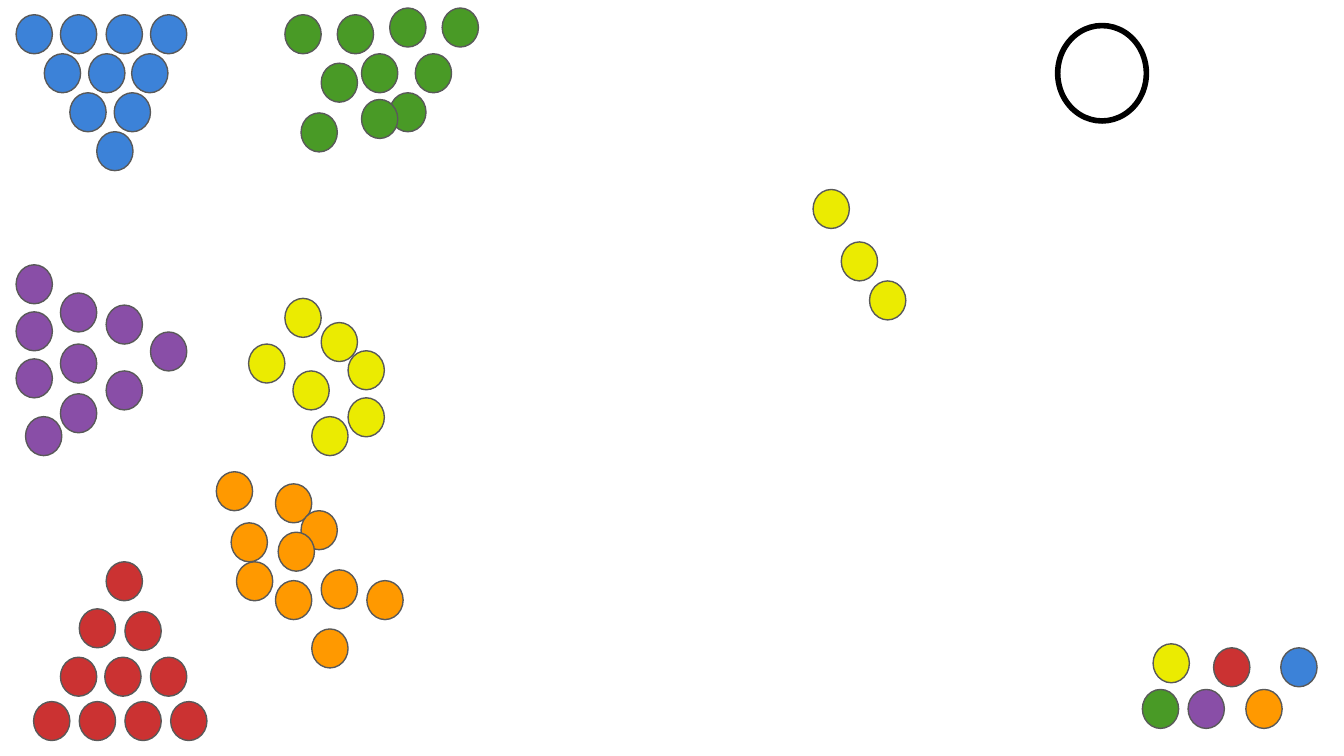
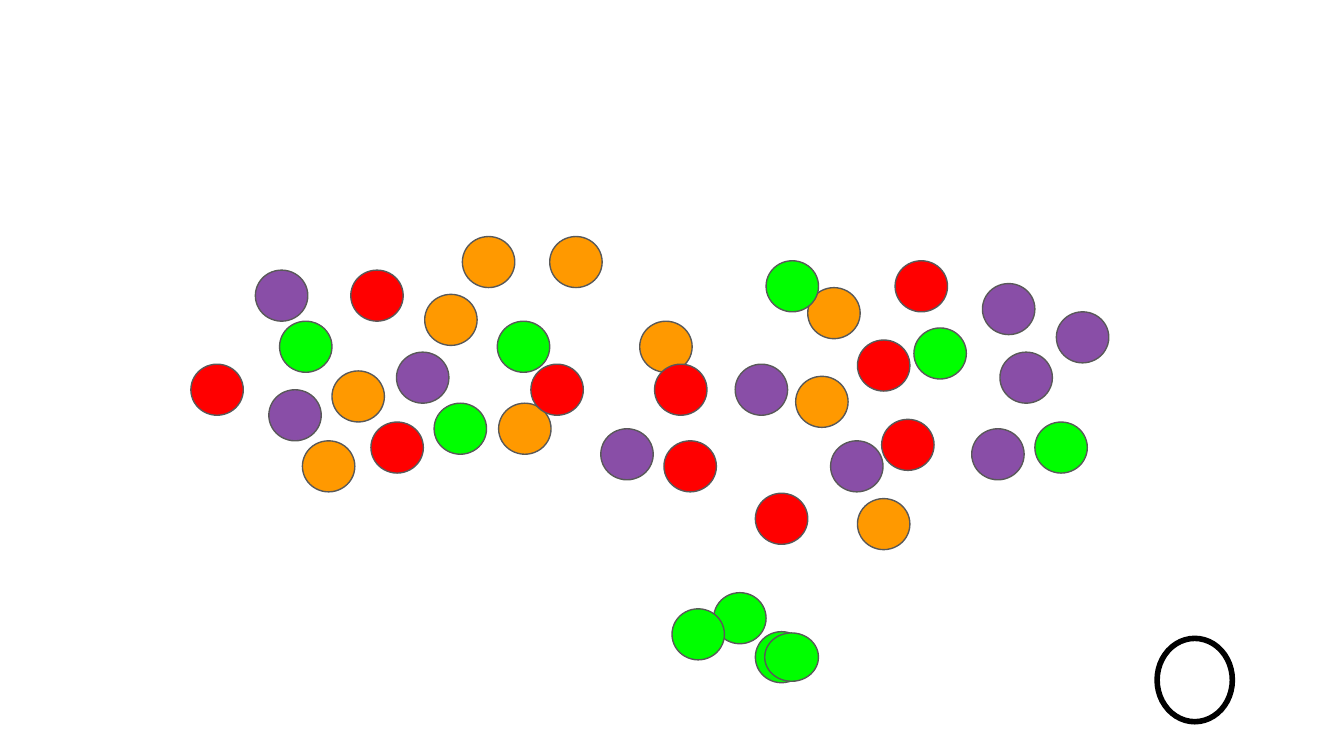
from pptx import Presentation
from pptx import util as u
from pptx.dml.color import RGBColor
from pptx.enum import shapes

PX = 9144  # EMU in one px, 100 px to the inch
SLIDE_WIDTH = 1000  # the height follows from 16:9

BLUE, RED, PURPLE = "3C82D8", "CB3232", "894EA7"
GREEN, YELLOW, ORANGE = "499A26", "EBEB01", "FF9900"
BRIGHT_RED, BRIGHT_GREEN = "FF0000", "00FF00"
WHITE, BLACK, OUTLINE = "FFFFFF", "000000", "595959"

SMALL_BALL = (27, 29)
LARGE_BALL = (39, 38)

# Ordered racks: box, colour, and lines of balls as (first, last, count)
RACKS = [
    ((12, 11), BLUE, [((0, 0), (100, 0), 4), ((21, 29), (86, 29), 3),
                      ((40, 58), (73, 58), 2), ((60, 87), (60, 87), 1)]),
    ((25, 418), RED, [((54, 0), (54, 0), 1), ((34, 35), (68, 37), 2),
                      ((20, 71), (87, 71), 3), ((0, 104), (102, 104), 4)]),
    ((12, 197), PURPLE, [((0, 0), (0, 70), 3), ((7, 113), (7, 113), 1),
                         ((33, 21), (33, 96), 3), ((67, 30), (67, 79), 2),
                         ((100, 50), (100, 50), 1)]),
]

# Loose heaps: box, colour, and ball positions inside the box
HEAPS = [
    ((212, 6), GREEN, [(78, 0), (117, 0), (39, 5), (0, 5), (97, 34),
                       (57, 34), (78, 63), (57, 68), (27, 41), (12, 78)]),
    ((185, 222), YELLOW, [(74, 74), (27, 0), (74, 39), (0, 34),
                          (54, 18), (47, 88), (33, 54)]),
    ((605, 141), YELLOW, [(0, 0), (21, 39), (42, 68)]),
    ((161, 351), ORANGE, [(44, 9), (78, 73), (44, 81), (71, 117), (63, 29),
                          (11, 38), (0, 0), (112, 81), (15, 67), (46, 45)]),
]

# One spare ball of each colour
SPARES_BOX = (850, 479)
SPARES = [(YELLOW, (8, 0)), (PURPLE, (34, 34)), (ORANGE, (77, 34)),
          (GREEN, (0, 34)), (RED, (53, 3)), (BLUE, (103, 3))]

# Mixed field of large balls
FIELD_BOX = (142, 176)
FIELD = {
    ORANGE: [(267, 0), (174, 43), (450, 104), (105, 100), (334, 63),
             (229, 124), (459, 38), (202, 0), (496, 195), (83, 152)],
    BRIGHT_RED: [(514, 136), (253, 95), (352, 152), (524, 18), (119, 25),
                 (134, 138), (0, 95), (496, 77), (345, 95), (420, 191)],
    BRIGHT_GREEN: [(66, 63), (628, 138), (538, 68), (228, 63),
                   (428, 18), (181, 124)],
    PURPLE: [(476, 152), (48, 25), (581, 143), (644, 56), (153, 86),
             (602, 86), (589, 35), (58, 114), (305, 143), (405, 95)],
}
GREEN_PILE_BOX = (500, 441)
GREEN_PILE = [(31, 0), (0, 12), (62, 29)]
FLAT_BALL, FLAT_BALL_SIZE = (69, 30), (40, 36)


def px(length):
    return u.Emu(round(length) * PX)


def color(code):
    return RGBColor.from_string(code)


def add_ball(slide, box, offset, size, fill, outline=OUTLINE, weight=0.75):
    place = (box[0] + offset[0], box[1] + offset[1], *size)
    ball = slide.shapes.add_shape(shapes.MSO_SHAPE.OVAL, *map(px, place))
    ball.shadow.inherit = False
    ball.fill.solid()
    ball.fill.fore_color.rgb = color(fill)
    ball.line.color.rgb = color(outline)
    ball.line.width = u.Pt(weight)


def add_heap(slide, box, fill, offsets, size):
    for offset in offsets:
        add_ball(slide, box, offset, size, fill)


def add_rack(slide, box, fill, lines):
    for (x0, y0), (x1, y1), count in lines:
        gaps = max(count - 1, 1)
        offsets = [(x0 + (x1 - x0) * i / gaps, y0 + (y1 - y0) * i / gaps)
                   for i in range(count)]
        add_heap(slide, box, fill, offsets, SMALL_BALL)


def add_ring(slide, left, top, width, height):
    add_ball(slide, (left, top), (0, 0), (width, height), WHITE, BLACK, 3)


def build_sorted_slide(slide):
    for rack in RACKS:
        add_rack(slide, *rack)
    for heap in HEAPS:
        add_heap(slide, *heap, SMALL_BALL)
    add_ring(slide, 787, 19, 66, 71)
    for fill, offset in SPARES:
        add_ball(slide, SPARES_BOX, offset, SMALL_BALL, fill)


def build_mixed_slide(slide):
    for fill, offsets in FIELD.items():
        add_heap(slide, FIELD_BOX, fill, offsets, LARGE_BALL)
    add_heap(slide, GREEN_PILE_BOX, BRIGHT_GREEN, GREEN_PILE, LARGE_BALL)
    add_ball(slide, GREEN_PILE_BOX, FLAT_BALL, FLAT_BALL_SIZE, BRIGHT_GREEN)
    add_ring(slide, 861, 475, 56, 62)


def main():
    deck = Presentation()
    deck.slide_width = px(SLIDE_WIDTH)
    deck.slide_height = deck.slide_width * 9 // 16
    for build in (build_sorted_slide, build_mixed_slide):
        slide = deck.slides.add_slide(deck.slide_layouts[6])
        slide.background.fill.solid()
        slide.background.fill.fore_color.rgb = color(WHITE)
        build(slide)
    deck.save("out.pptx")


if __name__ == "__main__":
    main()
